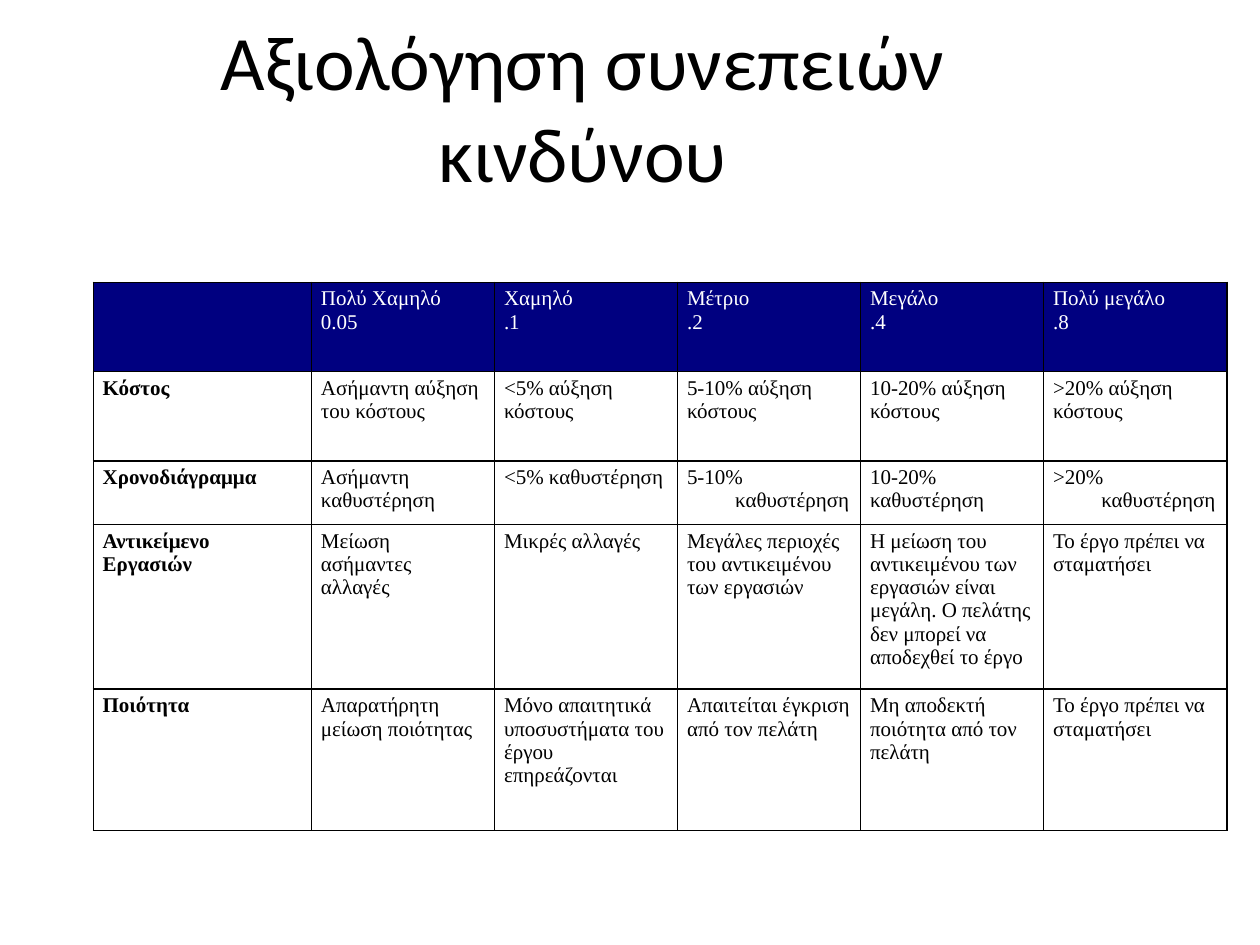
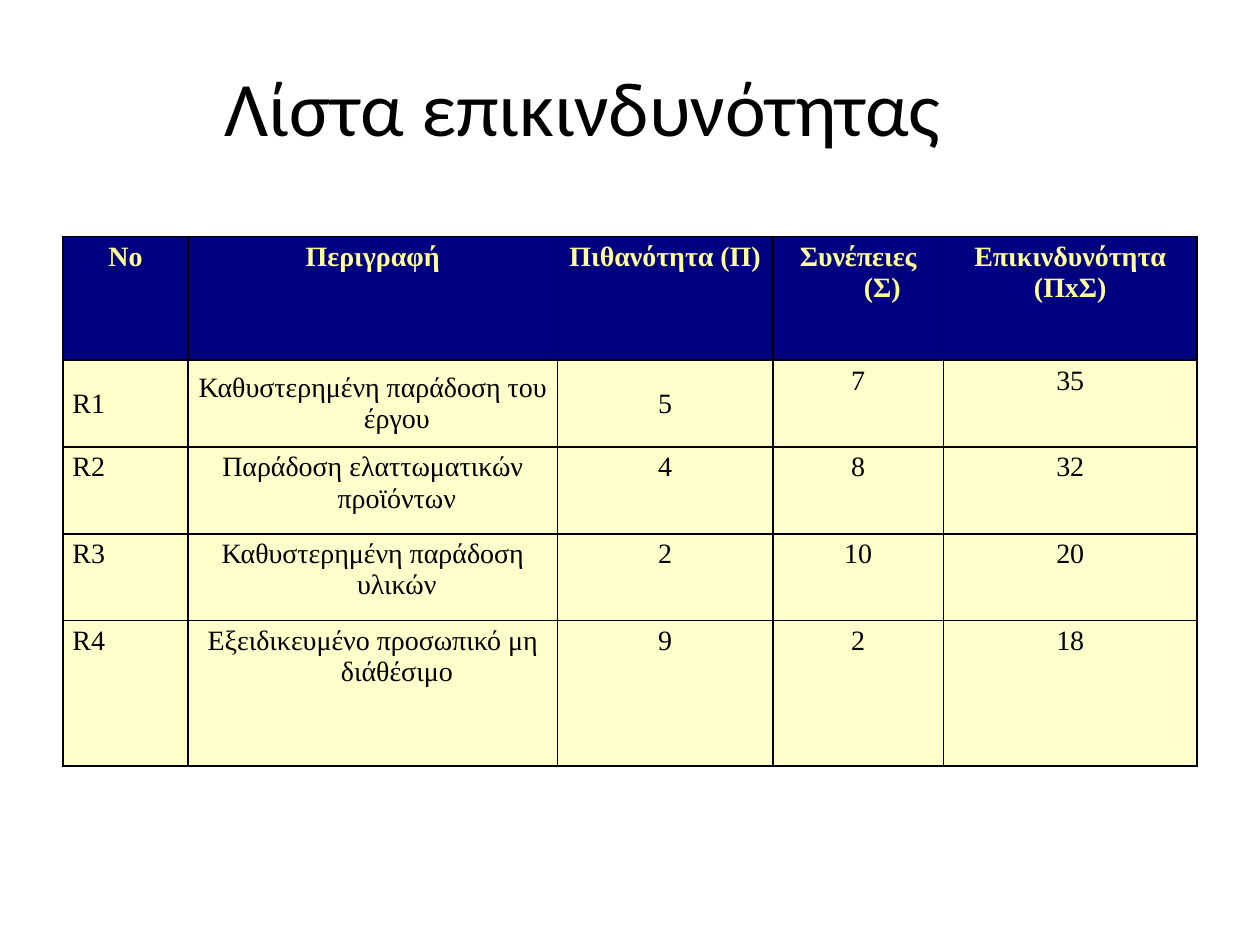
from dataclasses import dataclass

import pptx
import pptx.dml.color
import pptx.enum.text
import pptx.oxml
import pptx.oxml.ns
import pptx.slide
import pptx.table
import pptx.util

Cm = pptx.util.Cm
Pt = pptx.util.Pt
Align = pptx.enum.text.PP_ALIGN
Anchor = pptx.enum.text.MSO_ANCHOR

HUES = {
    "ink": "000000",
    "navy": "000080",
    "white": "FFFFFF",
    "lemon": "FFFF99",
    "cream": "FFFFCC",
}
HANG = Cm(0.97)
Spot = tuple[int, int]


@dataclass(frozen=True)
class Grid:
    """A table: its place and text, and the rules that style its cells."""
    title: str
    left: float
    top: float
    cols: list[float]
    rows: list[float]
    text: list[list[str]]
    size: int
    head: str
    fill: str | None
    bold: str          # "row" for a bold head row, "col" for a bold first column
    center: bool
    hang: set[Spot]
    middle: set[Spot]


RISK = Grid(
    title="Αξιολόγηση συνεπειών κινδύνου",
    left=1.88, top=5.69,
    cols=[4.4] + [3.69] * 5,
    rows=[1.8, 1.8, 1.28, 3.32, 2.85],
    text=[
        ["", "Πολύ Χαμηλό\n0.05", "Χαμηλό\n.1", "Μέτριο\n.2",
         "Μεγάλο\n.4", "Πολύ μεγάλο\n.8"],
        ["Κόστος", "Ασήμαντη αύξηση του κόστους", "<5% αύξηση κόστους",
         "5-10% αύξηση κόστους", "10-20% αύξηση κόστους",
         ">20% αύξηση κόστους"],
        ["Χρονοδιάγραμμα", "Ασήμαντη καθυστέρηση", "<5% καθυστέρηση",
         "5-10% καθυστέρηση", "10-20% καθυστέρηση", ">20% καθυστέρηση"],
        ["Αντικείμενο Εργασιών", "Μείωση ασήμαντες αλλαγές",
         "Μικρές αλλαγές",
         "Μεγάλες περιοχές του αντικειμένου των εργασιών",
         "Η μείωση του αντικειμένου των εργασιών είναι μεγάλη. "
         "Ο πελάτης δεν μπορεί να αποδεχθεί το έργο",
         "Το έργο πρέπει να σταματήσει"],
        ["Ποιότητα", "Απαρατήρητη μείωση ποιότητας",
         "Μόνο απαιτητικά υποσυστήματα του έργου επηρεάζονται",
         "Απαιτείται έγκριση από τον πελάτη",
         "Μη αποδεκτή ποιότητα από τον πελάτη",
         "Το έργο πρέπει να σταματήσει"],
    ],
    size=12, head="white", fill=None, bold="col", center=False,
    hang={(0, c) for c in range(6)}
    | {(1, 0), (2, 0), (4, 0), (2, 3), (2, 5), (3, 2)},
    middle=set(),
)

LIST = Grid(
    title="Λίστα επικινδυνότητας",
    left=1.27, top=4.77,
    cols=[2.52, 7.45, 4.34, 3.44, 5.11],
    rows=[2.49, 1.75, 1.75, 1.75, 2.93],
    text=[
        ["Νο", "Περιγραφή", "Πιθανότητα (Π)", "Συνέπειες (Σ)",
         "Επικινδυνότητα\n(ΠxΣ)"],
        ["R1", "Καθυστερημένη παράδοση του έργου", "5", "7", "35"],
        ["R2", "Παράδοση ελαττωματικών προϊόντων", "4", "8", "32"],
        ["R3", "Καθυστερημένη παράδοση υλικών", "2", "10", "20"],
        ["R4", "Εξειδικευμένο προσωπικό μη διάθέσιμο", "9", "2", "18"],
    ],
    size=16, head="lemon", fill="cream", bold="row", center=True,
    hang={(r, c) for r in range(5) for c in range(5)} - {(1, 3)},
    middle={(1, c) for c in range(3)},
)


def rgb(name: str) -> pptx.dml.color.RGBColor:
    return pptx.dml.color.RGBColor.from_string(HUES[name])


def add_run(para, text: str, font: str, size: int, hue: str,
            bold: bool = False) -> None:
    run = para.add_run()
    run.text = text
    run.font.name = font
    run.font.size = Pt(size)
    run.font.bold = bold
    run.font.color.rgb = rgb(hue)


def add_title(slide: pptx.slide.Slide, text: str) -> None:
    shape = slide.shapes.title
    shape.left, shape.top = Cm(1.27), Cm(0.33)
    shape.width, shape.height = Cm(20.96), Cm(3.61)
    frame = shape.text_frame
    frame.auto_size = pptx.enum.text.MSO_AUTO_SIZE.NONE
    frame.vertical_anchor = Anchor.MIDDLE
    para = frame.paragraphs[0]
    para.alignment = Align.CENTER
    add_run(para, text, "Calibri", 44, "ink")


def add_edges(cell: pptx.table._Cell) -> None:
    """Rule all four sides of a cell; call before the fill is set."""
    props = cell._tc.get_or_add_tcPr()
    for side in "LRTB":
        props.append(pptx.oxml.parse_xml(
            f'<a:ln{side} {pptx.oxml.ns.nsdecls("a")} w="{Pt(1)}">'
            f'<a:solidFill><a:srgbClr val="{HUES["ink"]}"/></a:solidFill>'
            f'</a:ln{side}>'))


def fill_cell(cell: pptx.table._Cell, grid: Grid, row: int, col: int) -> None:
    add_edges(cell)
    fill = "navy" if row == 0 else grid.fill
    if fill:
        cell.fill.solid()
        cell.fill.fore_color.rgb = rgb(fill)
    else:
        cell.fill.background()
    cell.margin_left = cell.margin_right = Cm(0.19)
    cell.margin_top = cell.margin_bottom = Cm(0.1)
    spot = (row, col)
    cell.vertical_anchor = Anchor.MIDDLE if spot in grid.middle else Anchor.TOP
    text = grid.text[row][col]
    if not text:
        return
    mid = grid.center and (row == 0 or col > 0)
    bold = (row if grid.bold == "row" else col) == 0
    frame = cell.text_frame
    for num, line in enumerate(text.split("\n")):
        para = frame.add_paragraph() if num else frame.paragraphs[0]
        para.alignment = Align.CENTER if mid else Align.LEFT
        if spot in grid.hang:
            props = para._p.get_or_add_pPr()
            props.set("marL", str(HANG))
            props.set("indent", str(-HANG))
        add_run(para, line, "Times New Roman", grid.size,
                "ink" if row else grid.head, bold)


def add_grid(slide: pptx.slide.Slide, grid: Grid) -> None:
    table = slide.shapes.add_table(
        len(grid.rows), len(grid.cols), Cm(grid.left), Cm(grid.top),
        Cm(sum(grid.cols)), Cm(sum(grid.rows))).table
    table.first_row = table.horz_banding = False
    for col, width in zip(table.columns, grid.cols):
        col.width = Cm(width)
    for row, height in zip(table.rows, grid.rows):
        row.height = Cm(height)
    for r in range(len(grid.rows)):
        for c in range(len(grid.cols)):
            fill_cell(table.cell(r, c), grid, r, c)


def main() -> None:
    deck = pptx.Presentation()
    deck.slide_width, deck.slide_height = Cm(25.4), Cm(19.05)
    for grid in (RISK, LIST):
        slide = deck.slides.add_slide(deck.slide_layouts[5])
        add_title(slide, grid.title)
        add_grid(slide, grid)
    deck.save("out.pptx")


if __name__ == "__main__":
    main()
